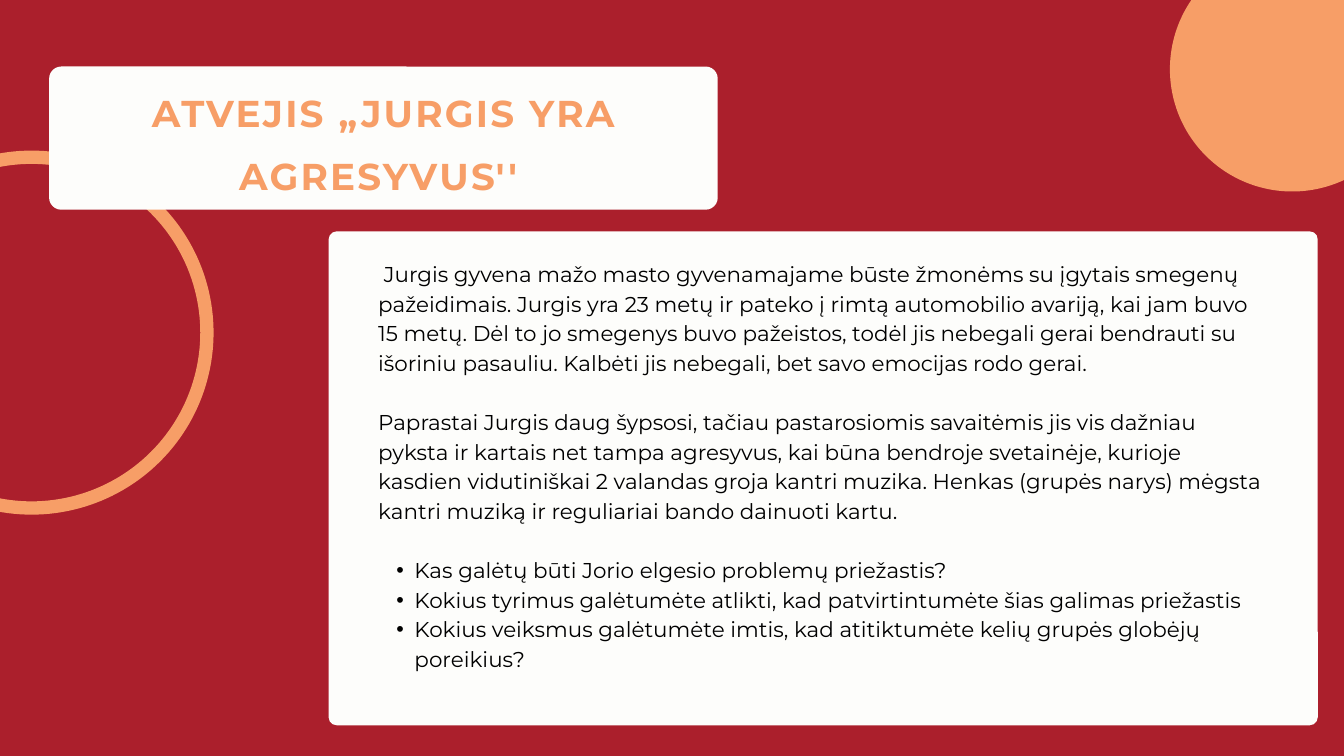
import pptx
import pptx.util
import pptx.dml.color
import pptx.enum.shapes
import pptx.enum.text
import pptx.oxml.ns
from lxml import etree

Pt = pptx.util.Pt
RGB = pptx.dml.color.RGBColor
Kind = pptx.enum.shapes.MSO_SHAPE
Align = pptx.enum.text.PP_ALIGN
qn = pptx.oxml.ns.qn

RED = RGB(0xAB, 0x1F, 0x2C)
PEACH = RGB(0xF7, 0x9E, 0x67)
CREAM = RGB(0xFD, 0xFD, 0xFB)
BLACK = RGB(0, 0, 0)

TITLE = " ATVEJIS „JURGIS YRA AGRESYVUS''"
STORY = [
    " Jurgis gyvena mažo masto gyvenamajame būste žmonėms su įgytais smegenų pažeidimais. Jurgis yra 23 metų ir pateko į rimtą automobilio avariją, kai jam buvo 15 metų. Dėl to jo smegenys buvo pažeistos, todėl jis nebegali gerai bendrauti su išoriniu pasauliu. Kalbėti jis nebegali, bet savo emocijas rodo gerai.",
    "Paprastai Jurgis daug šypsosi, tačiau pastarosiomis savaitėmis jis vis dažniau pyksta ir kartais net tampa agresyvus, kai būna bendroje svetainėje, kurioje kasdien vidutiniškai 2 valandas groja kantri muzika. Henkas (grupės narys) mėgsta kantri muziką ir reguliariai bando dainuoti kartu.",
]
TASKS = [
    "Kas galėtų būti Jorio elgesio problemų priežastis?",
    "Kokius tyrimus galėtumėte atlikti, kad patvirtintumėte šias galimas priežastis",
    "Kokius veiksmus galėtumėte imtis, kad atitiktumėte kelių grupės globėjų poreikius?",
]

LEAD = Pt(31.7)
HEAD_FONT = {"name": "Montserrat", "size": Pt(40), "bold": True}
BODY_FONT = {"name": "Montserrat", "size": Pt(23)}
HEAD_PARA = {"alignment": Align.CENTER, "line_spacing": Pt(68)}
BODY_PARA = {"alignment": Align.LEFT, "line_spacing": LEAD}
GAP_PARA = {**BODY_PARA, "space_before": LEAD}


def apply(item, style):
    for key, value in style.items():
        setattr(item, key, value)


def add_form(kind, box, fill=None, line=None, width=0, round_by=0):
    form = slide.shapes.add_shape(kind, *map(Pt, box))
    form.shadow.inherit = False
    if fill is None:
        form.fill.background()
    else:
        form.fill.solid()
        form.fill.fore_color.rgb = fill
    if line is None:
        form.line.fill.background()
    else:
        form.line.color.rgb = line
        form.line.width = Pt(width)
    if round_by:
        form.adjustments[0] = round_by / min(box[2:])


def add_frame(box):
    frame = slide.shapes.add_textbox(*map(Pt, box)).text_frame
    apply(frame, {"word_wrap": True, "margin_left": 0, "margin_top": 0,
                  "margin_right": 0, "margin_bottom": 0})
    return frame


def fill_para(para, text, style, font, color):
    apply(para, style)
    run = para.add_run()
    run.text = text
    apply(run.font, font)
    run.font.color.rgb = color
    return run


def add_bullet(para):
    para.level = 1
    props = para._p.get_or_add_pPr()
    props.set("marL", str(Pt(38.9)))
    props.set("indent", str(-Pt(19.45)))
    etree.SubElement(props, qn("a:buFont")).set("typeface", "Arial")
    etree.SubElement(props, qn("a:buChar")).set("char", "•")


deck = pptx.Presentation()
deck.slide_width, deck.slide_height = Pt(1440), Pt(810)
slide = deck.slides.add_slide(deck.slide_layouts[6])
slide.background.fill.solid()
slide.background.fill.fore_color.rgb = RED

add_form(Kind.ROUNDED_RECTANGLE, (352.1, 247.9, 1059.8, 529.2), CREAM, round_by=8.6)
body = add_frame((405.2, 275.9, 954, 471.6))
rows = [(text, False) for text in STORY] + [(text, True) for text in TASKS]
for i, (text, listed) in enumerate(rows):
    para = body.add_paragraph() if i else body.paragraphs[0]
    if listed:
        add_bullet(para)
    style = GAP_PARA if 0 < i <= len(STORY) else BODY_PARA
    fill_para(para, text, style, BODY_FONT, BLACK)

add_form(Kind.OVAL, (-154.1, 168.5, 375.8, 375.8), line=PEACH, width=14.25)
add_form(Kind.ROUNDED_RECTANGLE, (52.6, 71.3, 716.4, 153.4), CREAM, round_by=13)
head = add_frame((101.5, 76.3, 607.7, 129.6))
run = fill_para(head.paragraphs[0], TITLE, HEAD_PARA, HEAD_FONT, PEACH)
run.font._element.set("spc", "240")
add_form(Kind.OVAL, (1253.5, -56.9, 262.1, 262.1), PEACH)

deck.save("out.pptx")
